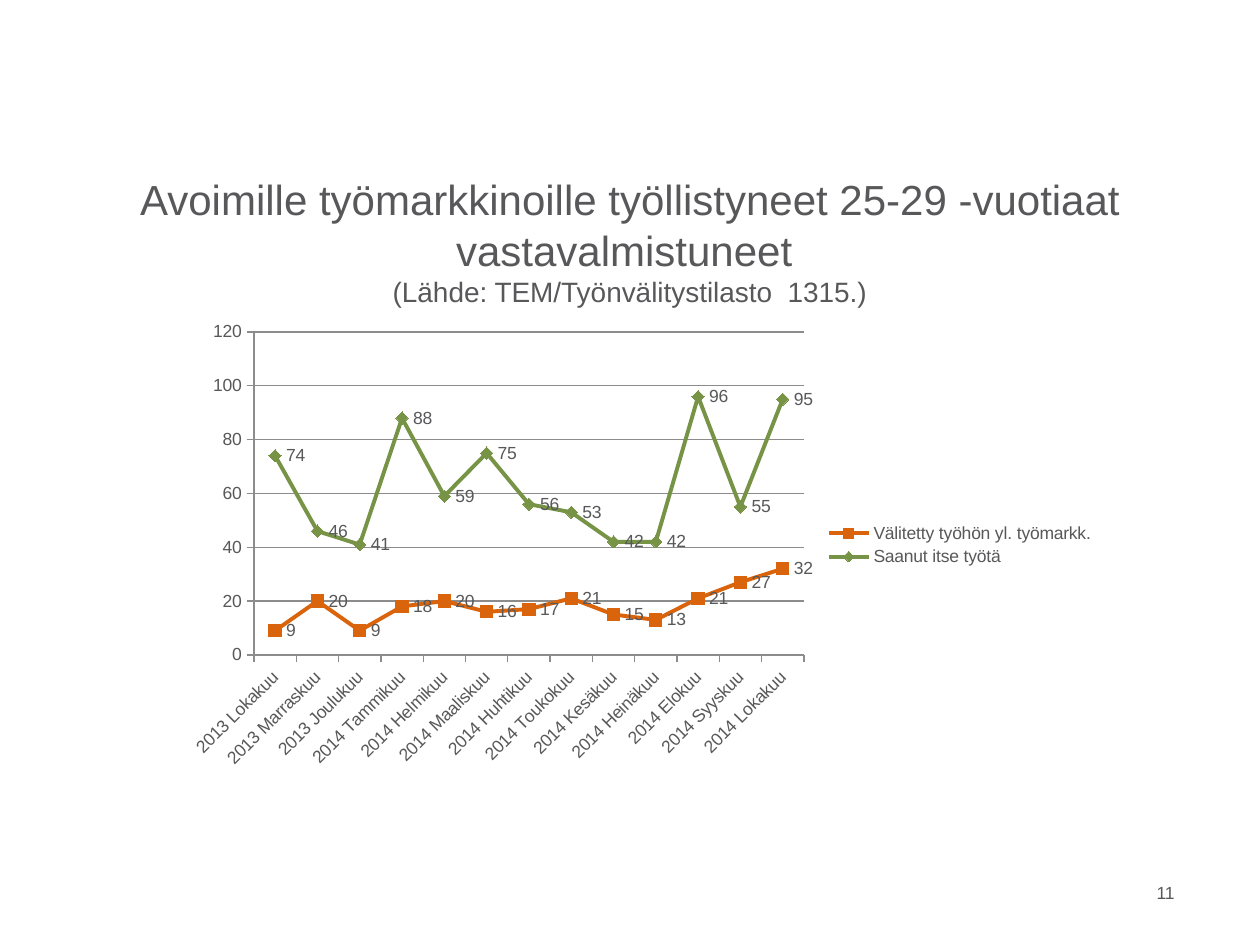
"""Build a slide with a line chart of graduates aged 25-29 who found work."""
import dataclasses

import pptx
import pptx.chart.data
import pptx.dml.color
import pptx.enum.chart
import pptx.enum.text
import pptx.oxml
import pptx.oxml.ns
import pptx.util

EMU_PER_PX = 914400 / 126


@dataclasses.dataclass(frozen=True)
class Theme:
    """Colours, font and type sizes of the slide."""
    font: str = "Arial"
    text: str = "58585A"
    grid: str = "8C8C8C"
    orange: str = "D9640C"
    green: str = "779346"
    title_size: int = 24
    source_size: int = 16
    small_size: int = 10
    axis_width: float = 0.75
    series_width: float = 2.25
    marker_size: int = 7


THEME = Theme()
MARKER = pptx.enum.chart.XL_MARKER_STYLE
ALIGN = pptx.enum.text.PP_ALIGN
ANCHOR = pptx.enum.text.MSO_ANCHOR

MONTHS = [
    "2013 Lokakuu", "2013 Marraskuu", "2013 Joulukuu", "2014 Tammikuu",
    "2014 Helmikuu", "2014 Maaliskuu", "2014 Huhtikuu", "2014 Toukokuu",
    "2014 Kesäkuu", "2014 Heinäkuu", "2014 Elokuu", "2014 Syyskuu",
    "2014 Lokakuu",
]
SERIES = [
    ("Välitetty työhön yl. työmarkk.",
     (9, 20, 9, 18, 20, 16, 17, 21, 15, 13, 21, 27, 32),
     THEME.orange, MARKER.SQUARE),
    ("Saanut itse työtä",
     (74, 46, 41, 88, 59, 75, 56, 53, 42, 42, 96, 55, 95),
     THEME.green, MARKER.DIAMOND),
]
CHART_BOX = (174, 314, 932, 464)
PLOT_BOX = (254, 332, 550, 323)
LEGEND_BOX = (824, 520, 272, 50)


def px(length):
    """Turn pixels into EMU."""
    return pptx.util.Emu(round(length * EMU_PER_PX))


def rgb(colour):
    """Turn a hex string into a colour."""
    return pptx.dml.color.RGBColor.from_string(colour)


def style_font(font, size):
    """Give a font the theme's face and colour."""
    font.name = THEME.font
    font.size = pptx.util.Pt(size)
    font.bold = False
    font.color.rgb = rgb(THEME.text)


def style_line(line, colour, width):
    """Set the colour and width of a line."""
    line.color.rgb = rgb(colour)
    line.width = pptx.util.Pt(width)


def add_text(slide, box, lines, align, anchor):
    """Add a text box whose lines are (text, size) runs of one paragraph."""
    shape = slide.shapes.add_textbox(*map(px, box))
    frame = shape.text_frame
    frame.word_wrap = True
    frame.vertical_anchor = anchor
    paragraph = frame.paragraphs[0]
    paragraph.alignment = align
    for index, (text, size) in enumerate(lines):
        if index:
            paragraph.add_line_break()
        run = paragraph.add_run()
        run.text = text
        style_font(run.font, size)


def make_layout(box, inner=False):
    """Make a manual chart layout from a box on the slide."""
    left, top, width, height = CHART_BOX
    fractions = {
        "x": (box[0] - left) / width, "y": (box[1] - top) / height,
        "w": box[2] / width, "h": box[3] / height,
    }
    target = '<c:layoutTarget val="inner"/>' if inner else ""
    modes = '<c:xMode val="edge"/><c:yMode val="edge"/>'
    sizes = "".join(f'<c:{key} val="{value:.4f}"/>' for key, value in fractions.items())
    return pptx.oxml.parse_xml(
        f'<c:layout {pptx.oxml.ns.nsdecls("c")}><c:manualLayout>'
        f"{target}{modes}{sizes}</c:manualLayout></c:layout>")


def set_layout(element, layout, position):
    """Replace the layout of a chart part."""
    for old in element.findall(pptx.oxml.ns.qn("c:layout")):
        element.remove(old)
    element.insert(position, layout)


def style_axes(chart):
    """Style both axes, the grid and the slanted month labels."""
    for axis in (chart.category_axis, chart.value_axis):
        axis.major_tick_mark = pptx.enum.chart.XL_TICK_MARK.OUTSIDE
        axis.minor_tick_mark = pptx.enum.chart.XL_TICK_MARK.NONE
        style_line(axis.format.line, THEME.grid, THEME.axis_width)
        style_font(axis.tick_labels.font, THEME.small_size)
    body = chart.category_axis._element.find(
        f'{pptx.oxml.ns.qn("c:txPr")}/{pptx.oxml.ns.qn("a:bodyPr")}')
    body.set("rot", "-2700000")
    body.set("vert", "horz")
    value_axis = chart.value_axis
    value_axis.minimum_scale, value_axis.maximum_scale = 0, 120
    value_axis.major_unit = 20
    value_axis.has_major_gridlines = True
    style_line(value_axis.major_gridlines.format.line, THEME.grid, THEME.axis_width)


def style_series(series, colour, marker):
    """Style one line with its markers and value labels."""
    series.smooth = False
    style_line(series.format.line, colour, THEME.series_width)
    series.marker.style = marker
    series.marker.size = THEME.marker_size
    series.marker.format.fill.solid()
    series.marker.format.fill.fore_color.rgb = rgb(colour)
    style_line(series.marker.format.line, colour, THEME.axis_width)
    labels = series.data_labels
    labels.show_value = True
    labels.position = pptx.enum.chart.XL_LABEL_POSITION.RIGHT
    style_font(labels.font, THEME.small_size)


def add_line_chart(slide):
    """Add the monthly line chart with its legend."""
    data = pptx.chart.data.CategoryChartData()
    data.categories = MONTHS
    for name, values, _, _ in SERIES:
        data.add_series(name, values)
    chart = slide.shapes.add_chart(
        pptx.enum.chart.XL_CHART_TYPE.LINE_MARKERS, *map(px, CHART_BOX), data).chart
    chart.has_title = False
    style_font(chart.font, THEME.small_size)
    plot = chart.plots[0]
    plot.vary_by_categories = False
    for series, (_, _, colour, marker) in zip(plot.series, SERIES):
        style_series(series, colour, marker)
    style_axes(chart)
    chart.has_legend = True
    chart.legend.position = pptx.enum.chart.XL_LEGEND_POSITION.RIGHT
    chart.legend.include_in_layout = False
    style_font(chart.legend.font, THEME.small_size)
    set_layout(chart.legend._element, make_layout(LEGEND_BOX), 1)
    plot_area = chart._chartSpace.chart.plotArea
    set_layout(plot_area, make_layout(PLOT_BOX, inner=True), 0)


def main():
    """Build and save the presentation."""
    presentation = pptx.Presentation()
    presentation.slide_width, presentation.slide_height = px(1260), px(945)
    slide = presentation.slides.add_slide(presentation.slide_layouts[6])
    title = [
        ("Avoimille työmarkkinoille työllistyneet 25-29 -vuotiaat vastavalmistuneet ",
         THEME.title_size),
        ("(Lähde: TEM/Työnvälitystilasto  1315.)", THEME.source_size),
    ]
    add_text(slide, (63, 197, 1134, 88), title, ALIGN.CENTER, ANCHOR.MIDDLE)
    add_text(slide, (1131, 876, 56, 50), [("11", THEME.small_size)],
             ALIGN.RIGHT, ANCHOR.TOP)
    add_line_chart(slide)
    presentation.save("out.pptx")


if __name__ == "__main__":
    main()
